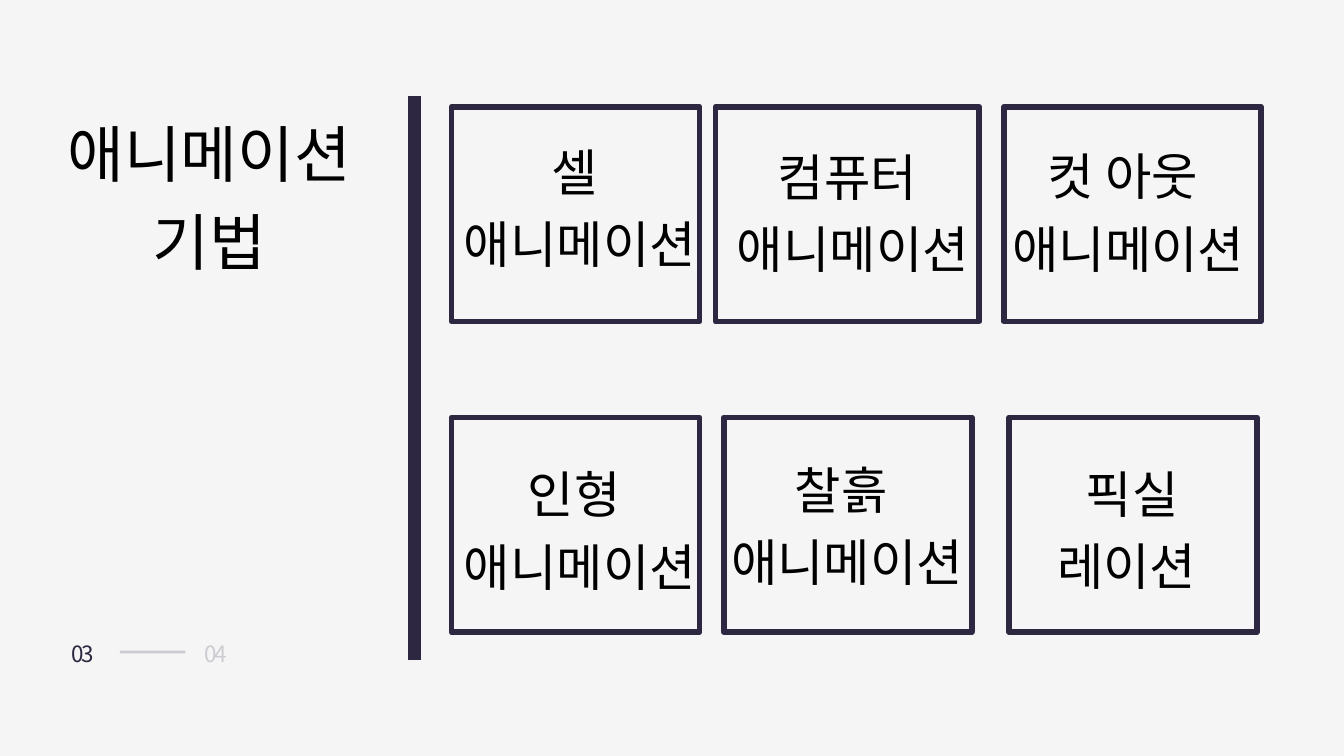
from lxml import etree
from pptx import Presentation
from pptx.dml.color import RGBColor
from pptx.enum.shapes import MSO_CONNECTOR, MSO_SHAPE
from pptx.enum.text import MSO_ANCHOR, MSO_AUTO_SIZE, PP_ALIGN
from pptx.oxml.ns import qn
from pptx.util import Cm, Pt

NAVY = RGBColor(0x2D, 0x27, 0x41)
BLACK = RGBColor(0, 0, 0)
PAPER = RGBColor(0xF5, 0xF5, 0xF5)
FONT = "Noto Sans CJK KR"
LINE = MSO_CONNECTOR.STRAIGHT
RECT = MSO_SHAPE.RECTANGLE
CENTER, LEFT = PP_ALIGN.CENTER, PP_ALIGN.LEFT
TOP = MSO_ANCHOR.TOP
FIXED = MSO_AUTO_SIZE.NONE
GROW = MSO_AUTO_SIZE.SHAPE_TO_FIT_TEXT

BOX_H = 5.41
TEXT_W, TEXT_H = 6.93, 3.96
# box top, then per card: lines, box left, box width, text left, text top
ROWS = [
    (2.69, [
        (("셀 ", "애니메이션"), 11.38, 6.25, 11.15, 3.12),
        (("컴퓨터 ", "애니메이션"), 18.03, 6.65, 18.03, 3.25),
        (("컷 아웃 ", "애니메이션"), 25.3, 6.48, 24.97, 3.23),
    ]),
    (10.52, [
        (("인형 ", "애니메이션"), 11.38, 6.25, 11.15, 11.25),
        (("찰흙 ", "애니메이션"), 18.24, 6.25, 17.88, 11.13),
        (("픽실", "레이션 "), 25.43, 6.25, 25.07, 11.23),
    ]),
]


class Deck:
    def __init__(self):
        self.prs = Presentation()
        self.prs.slide_width, self.prs.slide_height = Cm(33.87), Cm(19.05)
        self.slide = self.prs.slides.add_slide(self.prs.slide_layouts[5])
        fill = self.slide.background.fill
        fill.solid()
        fill.fore_color.rgb = PAPER

    def fade(self, node, alpha):
        """Set the opacity, in percent, of the colour under node."""
        tint = node.find(".//" + qn("a:srgbClr"))
        etree.SubElement(tint, qn("a:alpha"), val=str(alpha * 1000))

    def place(self, shape, x, y, w, h):
        shape.left, shape.top = Cm(x), Cm(y)
        shape.width, shape.height = Cm(w), Cm(h)

    def put(self, frame, lines, size, color, align, space, alpha=100, track=0):
        """Add one paragraph per line of text to the frame."""
        for i, line in enumerate(lines):
            para = frame.add_paragraph() if i else frame.paragraphs[0]
            para.alignment, para.line_spacing = align, space
            run = para.add_run()
            run.text = line
            run.font.size, run.font.name = Pt(size), FONT
            run.font.color.rgb = color
            props = run.font._element
            props.find(qn("a:latin")).addnext(
                props.makeelement(qn("a:ea"), {"typeface": FONT}))
            if track:
                props.set("spc", str(track))
            if alpha < 100:
                self.fade(props, alpha)

    def title(self, text, x, y, w, h):
        shape = self.slide.shapes.title
        self.place(shape, x, y, w, h)
        frame = shape.text_frame
        frame.auto_size, frame.word_wrap = FIXED, True
        frame.vertical_anchor = TOP
        self.put(frame, [text], 44, BLACK, CENTER, 1.2)

    def text(self, lines, x, y, w, h, *style, **more):
        box = self.slide.shapes.add_textbox(Cm(x), Cm(y), Cm(w), Cm(h))
        frame = box.text_frame
        frame.word_wrap, frame.auto_size = False, GROW
        self.put(frame, lines, *style, **more)

    def line(self, x1, y1, x2, y2, width, alpha=100):
        line = self.slide.shapes.add_connector(
            LINE, Cm(x1), Cm(y1), Cm(x2), Cm(y2))
        line.line.color.rgb, line.line.width = NAVY, Pt(width)
        props = line._element.spPr
        etree.SubElement(props, qn("a:effectLst"))
        if alpha < 100:
            self.fade(props, alpha)

    def frame(self, x, y, w, h):
        box = self.slide.shapes.add_shape(RECT, Cm(x), Cm(y), Cm(w), Cm(h))
        box.shadow.inherit = False
        box.fill.background()
        box.line.color.rgb, box.line.width = NAVY, Pt(4)


def main():
    deck = Deck()
    deck.title("애니메이션 기법", 0.41, 2.41, 9.73, 4.78)
    deck.line(10.44, 16.64, 10.44, 2.41, 9.5)
    for page, x, alpha in (("03", 1.55, 100), ("04", 4.9, 20)):
        deck.text([page], x, 15.93, 1.24, 0.99, 16, NAVY, LEFT, 1.1,
                  alpha=alpha, track=-150)
    deck.line(3.02, 16.43, 4.67, 16.43, 2, 20)
    for top, cards in ROWS:
        for lines, x, w, text_x, text_y in cards:
            deck.frame(x, top, w, BOX_H)
            deck.text(lines, text_x, text_y, TEXT_W, TEXT_H,
                      36, BLACK, CENTER, 1.2)
    deck.prs.save("out.pptx")


if __name__ == "__main__":
    main()
